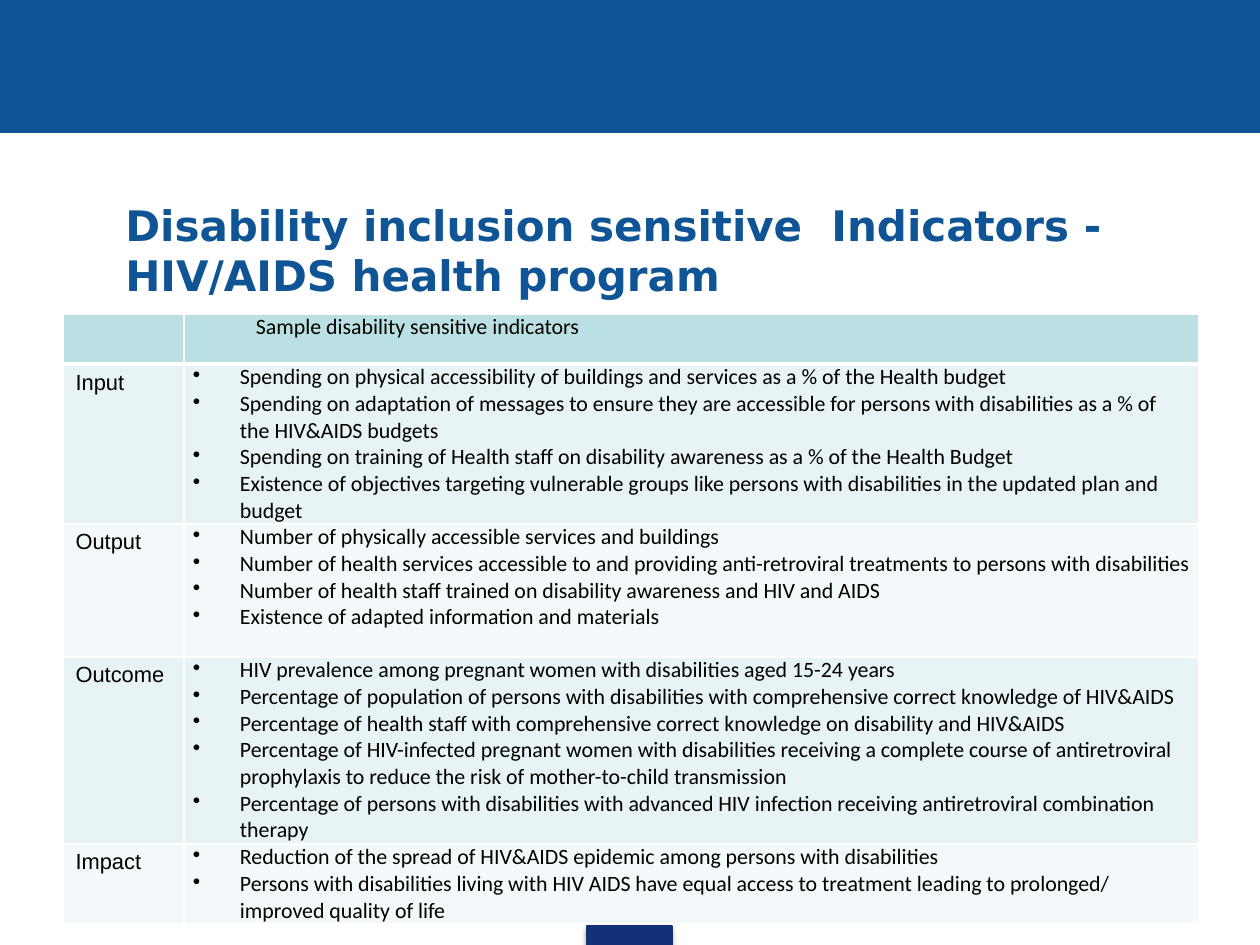
"""Build a slide with a table of disability-sensitive indicators for a health program."""
from dataclasses import dataclass

import pptx
import pptx.dml.color
import pptx.enum.shapes
import pptx.enum.text
import pptx.oxml
import pptx.oxml.ns
import pptx.util

SCALE = 914400 / 126
NS = pptx.oxml.ns.nsdecls("a")


@dataclass(frozen=True)
class Theme:
    blue: str = "0F5494"
    navy: str = "133176"
    black: str = "000000"
    white: str = "FFFFFF"
    header: str = "BBE0E3"
    bands: tuple[str, str] = ("E7F3F4", "F3F9FA")
    title_font: str = "DejaVu Sans"
    label_font: str = "Arial"
    body_font: str = "Calibri"
    title_pt: float = 24
    body_pt: float = 12.5
    line_pt: float = 0.75
    border_pt: float = 1
    header_border_pt: float = 3


@dataclass(frozen=True)
class Bar:
    x: int
    y: int
    w: int
    h: int
    color: str
    shadow: bool = False


@dataclass(frozen=True)
class Level:
    name: str
    height: int
    indicators: tuple[str, ...]


T = Theme()
BARS = (
    Bar(587, 926, 85, 19, T.navy, shadow=True),
    Bar(0, 0, 1260, 132, T.blue),
)
TITLE = "Disability inclusion sensitive  Indicators - HIV/AIDS health program"
HEADING = "Sample disability sensitive indicators"
HEADER_HEIGHT = 50
COLUMNS = (121, 1015)
LEVELS = (
    Level("Input", 160, (
        "Spending on physical accessibility of buildings and services as a % of the Health budget",
        "Spending on adaptation of messages to ensure they are accessible for persons with "
        "disabilities as a % of the HIV&AIDS budgets",
        "Spending on training of Health staff on disability awareness as a % of the Health Budget",
        "Existence of objectives targeting vulnerable groups like persons with disabilities in "
        "the updated plan and budget",
    )),
    Level("Output", 133, (
        "Number of physically accessible services and buildings",
        "Number of health services accessible to and providing anti-retroviral treatments to "
        "persons with disabilities",
        "Number of health staff trained on disability awareness and HIV and AIDS",
        "Existence of adapted information and materials",
    )),
    Level("Outcome", 187, (
        "HIV prevalence among pregnant women with disabilities aged 15-24 years",
        "Percentage of population of persons with disabilities with comprehensive correct "
        "knowledge of HIV&AIDS",
        "Percentage of health staff with comprehensive correct knowledge on disability and HIV&AIDS",
        "Percentage of HIV-infected pregnant women with disabilities receiving a complete course "
        "of antiretroviral prophylaxis to reduce the risk of mother-to-child transmission",
        "Percentage of persons with disabilities with advanced HIV infection receiving "
        "antiretroviral combination therapy",
    )),
    Level("Impact", 80, (
        "Reduction of the spread of HIV&AIDS epidemic among persons with disabilities",
        "Persons with disabilities living with HIV AIDS have equal access to treatment leading "
        "to prolonged/ improved quality of life",
    )),
)


def px(n: int) -> int:
    return pptx.util.Emu(round(n * SCALE))


def rgb(color: str) -> pptx.dml.color.RGBColor:
    return pptx.dml.color.RGBColor.from_string(color)


def style(p, font: str, size: float, color: str, bold: bool = False) -> None:
    p.font.name, p.font.size, p.font.bold = font, pptx.util.Pt(size), bold
    p.font.color.rgb = rgb(color)


def indent(p, left: int, first: int) -> None:
    pPr = p._p.get_or_add_pPr()
    pPr.set("marL", str(px(left)))
    pPr.set("indent", str(px(first)))


def add_bar(s, bar: Bar) -> None:
    sp = s.shapes.add_shape(pptx.enum.shapes.MSO_SHAPE.RECTANGLE,
                            px(bar.x), px(bar.y), px(bar.w), px(bar.h))
    sp.shadow.inherit = False
    sp.fill.solid()
    sp.fill.fore_color.rgb = sp.line.color.rgb = rgb(bar.color)
    sp.line.width = pptx.util.Pt(T.line_pt)
    if bar.shadow:
        effects = sp._element.spPr.find(pptx.oxml.ns.qn("a:effectLst"))
        effects.append(pptx.oxml.parse_xml(
            f'<a:outerShdw {NS} blurRad="39370" dist="22860" dir="5400000" rotWithShape="0">'
            f'<a:srgbClr val="{T.black}"><a:alpha val="35000"/></a:srgbClr></a:outerShdw>'))


def add_title(s) -> None:
    sp = s.shapes.add_textbox(px(64), px(185), px(1134), px(129))
    tf = sp.text_frame
    tf.word_wrap = True
    tf.vertical_anchor = pptx.enum.text.MSO_ANCHOR.MIDDLE
    p = tf.paragraphs[0]
    p.text = TITLE
    indent(p, 49, 0)
    style(p, T.title_font, T.title_pt, T.blue, bold=True)


def paint_cell(cell, fill: str, top: float, bottom: float) -> None:
    tcPr = cell._tc.get_or_add_tcPr()
    for side, width in (("L", T.border_pt), ("R", T.border_pt), ("T", top), ("B", bottom)):
        tcPr.append(pptx.oxml.parse_xml(
            f'<a:ln{side} {NS} w="{pptx.util.Pt(width)}"><a:solidFill>'
            f'<a:srgbClr val="{T.white}"/></a:solidFill></a:ln{side}>'))
    cell.fill.solid()
    cell.fill.fore_color.rgb = rgb(fill)


def write_cell(cell, lines: tuple[str, ...], font: str, left: int = 0, first: int = 0,
               bullet: bool = False) -> None:
    tf = cell.text_frame
    for i, line in enumerate(lines):
        p = tf.add_paragraph() if i else tf.paragraphs[0]
        p.text = line
        indent(p, left, first)
        if bullet:
            p._p.get_or_add_pPr().append(pptx.oxml.parse_xml(f'<a:buChar {NS} char="•"/>'))
        style(p, font, T.body_pt, T.black)


def tighten(cell) -> None:
    cell.margin_left = cell.margin_right = px(9)
    cell.margin_top = cell.margin_bottom = 0


def add_indicator_table(s) -> None:
    heights = (HEADER_HEIGHT, *(level.height for level in LEVELS))
    table = s.shapes.add_table(len(heights), len(COLUMNS), px(63), px(314),
                               px(sum(COLUMNS)), px(sum(heights))).table
    for column, width in zip(table.columns, COLUMNS):
        column.width = px(width)
    for i, (row, height) in enumerate(zip(table.rows, heights)):
        row.height = px(height)
        fill = T.bands[(i - 1) % 2] if i else T.header
        top = T.header_border_pt if i == 1 else T.border_pt
        bottom = T.border_pt if i else T.header_border_pt
        for cell in row.cells:
            paint_cell(cell, fill, top, bottom)
        tighten(row.cells[1])
    write_cell(table.cell(0, 0), ("",), T.label_font)
    write_cell(table.cell(0, 1), (HEADING,), T.body_font, first=63)
    for i, level in enumerate(LEVELS, start=1):
        write_cell(table.cell(i, 0), (level.name,), T.label_font)
        write_cell(table.cell(i, 1), level.indicators, T.body_font, 47, -47, bullet=True)


def main() -> None:
    prs = pptx.Presentation()
    prs.slide_width, prs.slide_height = px(1260), px(945)
    s = prs.slides.add_slide(prs.slide_layouts[6])
    for bar in BARS:
        add_bar(s, bar)
    add_title(s)
    add_indicator_table(s)
    prs.save("out.pptx")


if __name__ == "__main__":
    main()
